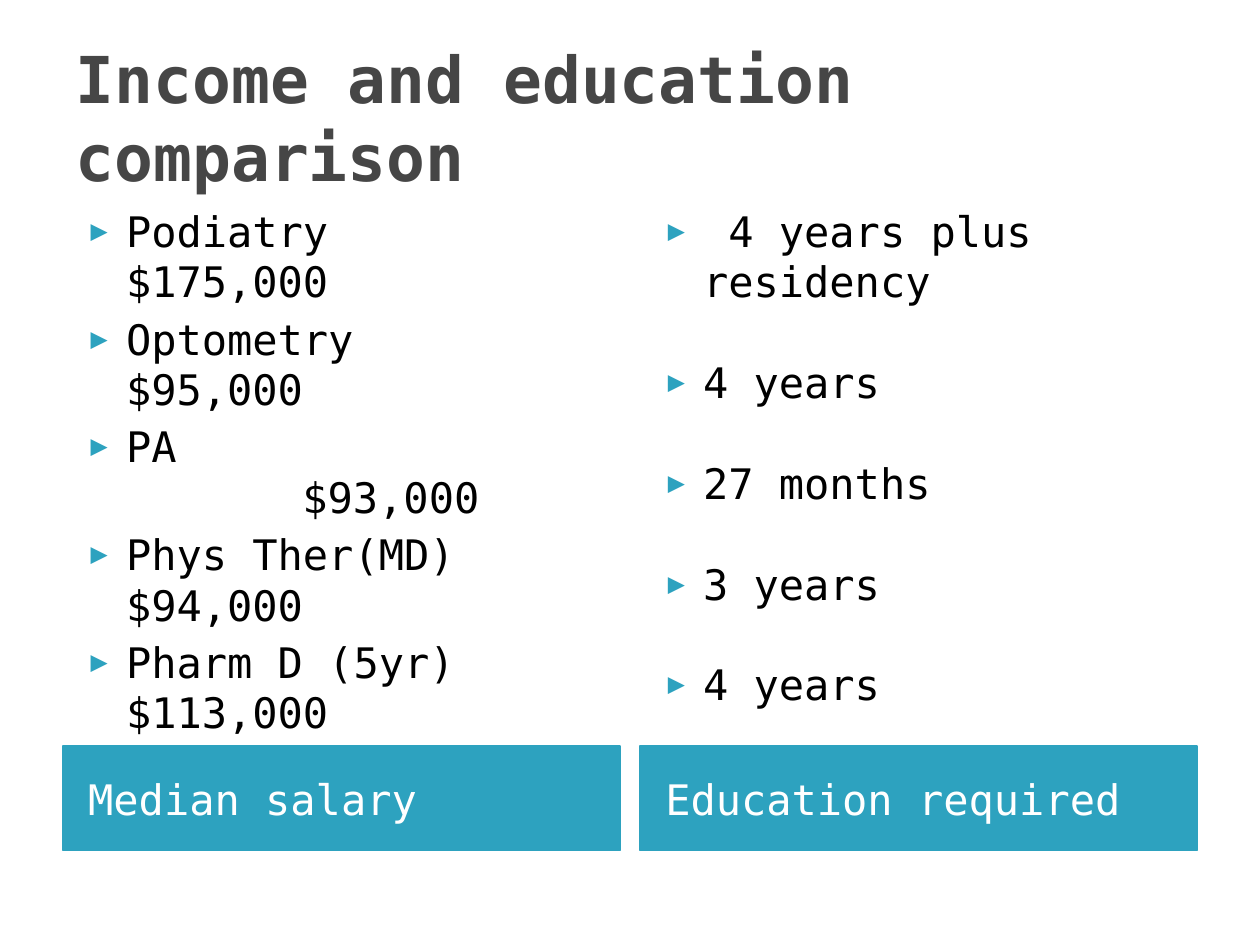
from dataclasses import dataclass

from lxml import etree
from pptx import Presentation
from pptx.dml.color import RGBColor
from pptx.enum.text import MSO_ANCHOR, MSO_AUTO_SIZE, PP_ALIGN
from pptx.oxml.ns import qn
from pptx.util import Inches, Pt

MIDDLE = MSO_ANCHOR.MIDDLE
TOP = MSO_ANCHOR.TOP
LEFT = PP_ALIGN.LEFT
NO_AUTOFIT = MSO_AUTO_SIZE.NONE
COMPARISON_LAYOUT = 4


@dataclass(frozen=True)
class Theme:
    font: str = "DejaVu Sans Mono"
    accent: str = "2DA2BF"
    title: str = "464646"
    text: str = "000000"
    header_text: str = "FFFFFF"
    title_size: float = 36.9
    body_size: float = 24
    bullet_percent: int = 68


@dataclass(frozen=True)
class Column:
    header: str
    items: tuple[str, ...]
    item_gap: float
    header_index: int
    list_index: int


THEME = Theme()
MARGIN = 0.5
COLUMN_WIDTH = 4.42
COLUMN_STEP = 4.58
TAB_POSITION = 1.8

COLUMNS = (
    Column(
        "Median salary",
        (
            "Podiatry\v$175,000",
            "Optometry\v$95,000",
            "PA\v\t$93,000",
            "Phys Ther(MD)\v$94,000",
            "Pharm D (5yr)\v$113,000",
        ),
        4, 1, 2,
    ),
    Column(
        "Education required",
        (" 4 years plus residency", "4 years", "27 months", "3 years", "4 years"),
        28.8, 3, 4,
    ),
)


def place(shape, left: float, top: float, width: float, height: float, anchor) -> None:
    shape.left, shape.top = Inches(left), Inches(top)
    shape.width, shape.height = Inches(width), Inches(height)
    frame = shape.text_frame
    frame.word_wrap = True
    frame.auto_size = NO_AUTOFIT
    frame.vertical_anchor = anchor


def style(paragraph, size: float, color: str, bold: bool = False) -> None:
    paragraph.alignment = LEFT
    font = paragraph.font
    font.name = THEME.font
    font.size = Pt(size)
    font.bold = bold
    font.color.rgb = RGBColor.from_string(color)


def add_bullet(paragraph) -> None:
    properties = paragraph._p.get_or_add_pPr()
    properties.set("marL", str(Inches(0.4)))
    properties.set("indent", str(Inches(-0.28)))
    color = etree.SubElement(properties, qn("a:buClr"))
    etree.SubElement(color, qn("a:srgbClr"), val=THEME.accent)
    etree.SubElement(properties, qn("a:buSzPct"), val=str(THEME.bullet_percent * 1000))
    etree.SubElement(properties, qn("a:buFont"), typeface=THEME.font)
    etree.SubElement(properties, qn("a:buChar"), char="▶")
    if "\t" in paragraph.text:
        tabs = etree.SubElement(properties, qn("a:tabLst"))
        etree.SubElement(tabs, qn("a:tab"), pos=str(Inches(TAB_POSITION)), algn="l")


def fill_title(shape, text: str) -> None:
    place(shape, MARGIN, 0.3, 9, 1.25, MIDDLE)
    shape.text_frame.text = text
    style(shape.text_frame.paragraphs[0], THEME.title_size, THEME.title, True)


def fill_header(shape, text: str, left: float) -> None:
    place(shape, left, 5.92, COLUMN_WIDTH, 0.83, MIDDLE)
    shape.fill.solid()
    shape.fill.fore_color.rgb = RGBColor.from_string(THEME.accent)
    shape.line.color.rgb = RGBColor.from_string(THEME.accent)
    shape.line.width = Pt(0.75)
    shape.text_frame.margin_left = Inches(0.2)
    shape.text_frame.text = text
    paragraph = shape.text_frame.paragraphs[0]
    paragraph.space_before = Pt(0)
    style(paragraph, THEME.body_size, THEME.header_text)


def fill_list(shape, items: tuple[str, ...], gap: float, left: float) -> None:
    place(shape, left, 1.58, COLUMN_WIDTH, 4.31, TOP)
    frame = shape.text_frame
    for position, item in enumerate(items):
        paragraph = frame.add_paragraph() if position else frame.paragraphs[0]
        paragraph.text = item
        add_bullet(paragraph)
        paragraph.space_before = Pt(gap if position else 0)
        style(paragraph, THEME.body_size, THEME.text)


def main() -> None:
    presentation = Presentation()
    presentation.slide_width = Inches(10)
    presentation.slide_height = Inches(7.5)
    slide = presentation.slides.add_slide(presentation.slide_layouts[COMPARISON_LAYOUT])
    fill_title(slide.shapes.title, "Income and education comparison")
    for number, column in enumerate(COLUMNS):
        left = MARGIN + number * COLUMN_STEP
        fill_header(slide.placeholders[column.header_index], column.header, left)
        fill_list(slide.placeholders[column.list_index], column.items, column.item_gap, left)
    presentation.save("out.pptx")


if __name__ == "__main__":
    main()
